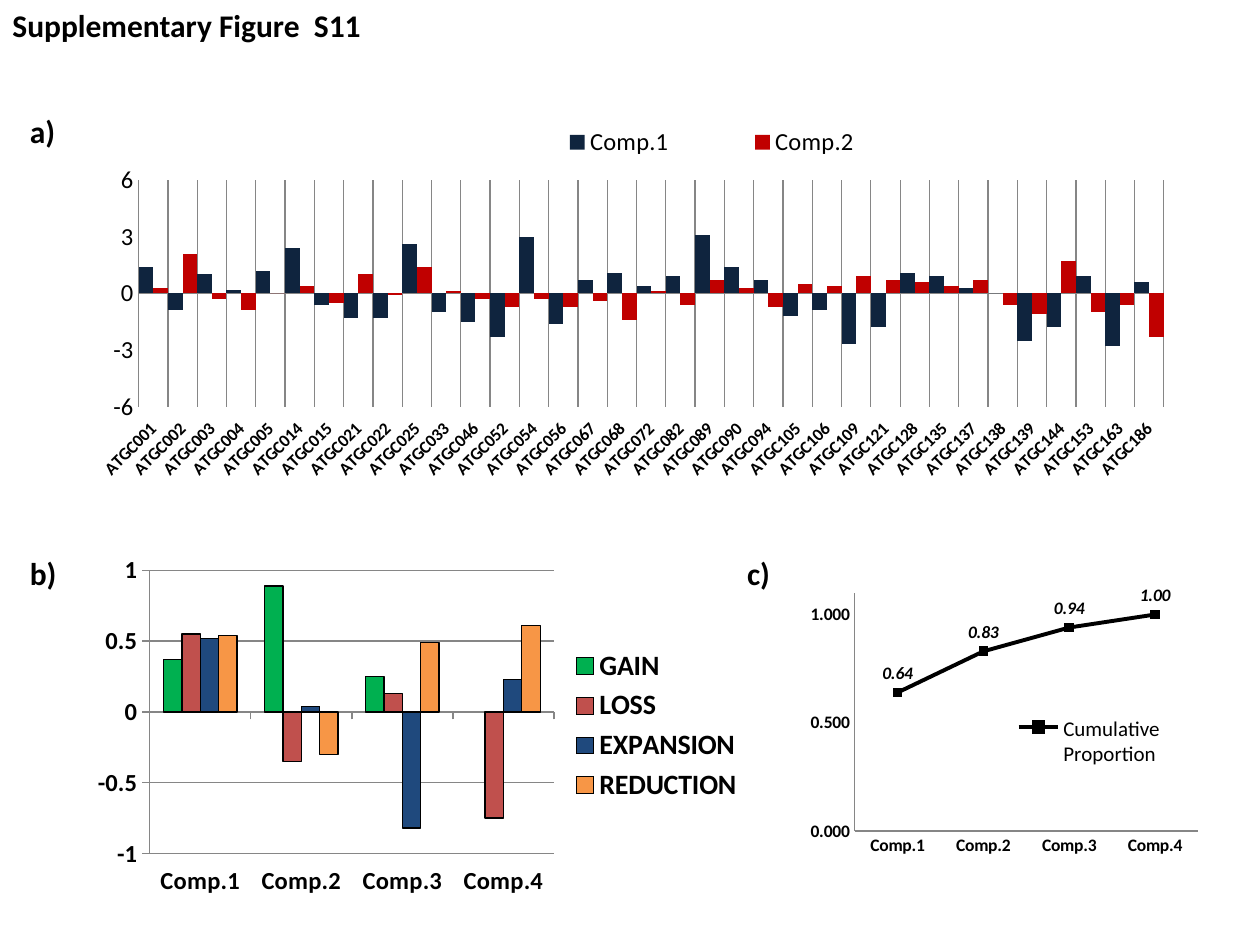
from lxml import etree
from pptx import Presentation
from pptx.chart.data import CategoryChartData
from pptx.dml.color import RGBColor
from pptx.enum.chart import (XL_CHART_TYPE, XL_LABEL_POSITION, XL_LEGEND_POSITION,
                             XL_MARKER_STYLE, XL_TICK_LABEL_POSITION, XL_TICK_MARK)
from pptx.enum.text import MSO_AUTO_SIZE
from pptx.oxml.ns import qn
from pptx.util import Pt

COLUMNS, LINE = XL_CHART_TYPE.COLUMN_CLUSTERED, XL_CHART_TYPE.LINE_MARKERS
TICK_NONE, TICK_OUT = XL_TICK_MARK.NONE, XL_TICK_MARK.OUTSIDE
LABELS_LOW, LABEL_ABOVE = XL_TICK_LABEL_POSITION.LOW, XL_LABEL_POSITION.ABOVE
LEGEND_RIGHT = XL_LEGEND_POSITION.RIGHT
MARKER_AUTOMATIC = XL_MARKER_STYLE.AUTOMATIC
FIT_SHAPE = MSO_AUTO_SIZE.SHAPE_TO_FIT_TEXT

FONT = "Calibri"
COLOURS = {
    "text": "000000", "axis": "868686", "navy": "0F243E", "crimson": "C00000",
    "green": "00B050", "red": "C0504D", "blue": "1F497D", "orange": "F79646",
}

COMPONENTS = [f"Comp.{number}" for number in range(1, 5)]
CLUSTERS = [f"ATGC{number:03d}" for number in (
    1, 2, 3, 4, 5, 14, 15, 21, 22, 25, 33, 46, 52, 54, 56, 67, 68, 72, 82, 89, 90, 94,
    105, 106, 109, 121, 128, 135, 137, 138, 139, 144, 153, 163, 186)]
SCORES = {
    "Comp.1": [1.4, -0.9, 1, 0.2, 1.2, 2.4, -0.6, -1.3, -1.3, 2.6, -1, -1.5, -2.3, 3, -1.6,
               0.7, 1.1, 0.4, 0.9, 3.1, 1.4, 0.7, -1.2, -0.9, -2.7, -1.8, 1.1, 0.9, 0.3, 0,
               -2.5, -1.8, 0.9, -2.8, 0.6],
    "Comp.2": [0.3, 2.1, -0.3, -0.9, 0, 0.4, -0.5, 1, -0.1, 1.4, 0.1, -0.3, -0.7, -0.3, -0.7,
               -0.4, -1.4, 0.1, -0.6, 0.7, 0.3, -0.7, 0.5, 0.4, 0.9, 0.7, 0.6, 0.4, 0.7, -0.6,
               -1.1, 1.7, -1, -0.6, -2.3],
}
LOADINGS = {
    "GAIN": [0.37, 0.89, 0.25, None],
    "LOSS": [0.55, -0.35, 0.13, -0.75],
    "EXPANSION": [0.52, 0.04, -0.82, 0.23],
    "REDUCTION": [0.54, -0.3, 0.49, 0.61],
}
PROPORTIONS = {"Cumulative Proportion": [0.64, 0.83, 0.94, 1]}


def colour(name):
    return RGBColor.from_string(COLOURS[name])


class FigureSlide:
    """Holds the figure's style and slide, and adds its labels and charts."""

    def __init__(self, slide):
        self.slide = slide

    def style_font(self, font, size, bold=False):
        font.name, font.size, font.bold = FONT, Pt(size), bold
        font.color.rgb = colour("text")

    def label(self, text, left, top, width, wrap=True):
        shape = self.slide.shapes.add_textbox(Pt(left), Pt(top), Pt(width), Pt(29))
        frame = shape.text_frame
        frame.word_wrap, frame.auto_size = wrap, FIT_SHAPE
        paragraph = frame.paragraphs[0]
        paragraph.text = text
        self.style_font(paragraph.font, 18, bold=True)

    def chart(self, kind, box, categories, values, size):
        data = CategoryChartData()
        data.categories = categories
        for name, numbers in values.items():
            data.add_series(name, numbers)
        chart = self.slide.shapes.add_chart(kind, *map(Pt, box), data).chart
        chart.has_title = False
        self.style_font(chart.font, size)
        chart.plots[0].vary_by_categories = False
        return chart

    def axis(self, axis, size, bold=False, tick=TICK_NONE, grid=False):
        axis.major_tick_mark, axis.minor_tick_mark = tick, TICK_NONE
        axis.format.line.color.rgb = colour("axis")
        axis.has_major_gridlines = grid
        if grid:
            axis.major_gridlines.format.line.color.rgb = colour("axis")
        self.style_font(axis.tick_labels.font, size, bold)

    def scale(self, axis, step, low=None, high=None):
        axis.major_unit, axis.minimum_scale, axis.maximum_scale = step, low, high

    def columns(self, chart, fills, gap, outlined=False):
        plot = chart.plots[0]
        plot.gap_width, plot.overlap = gap, 0
        for series, fill in zip(plot.series, fills):
            series.invert_if_negative = False
            series.format.fill.solid()
            series.format.fill.fore_color.rgb = colour(fill)
            if outlined:
                series.format.line.color.rgb = colour("text")
                series.format.line.width = Pt(0.75)

    def legend(self, chart, size, bold=False, area=None):
        chart.has_legend = True
        legend = chart.legend
        legend.position, legend.include_in_layout = LEGEND_RIGHT, False
        self.style_font(legend.font, size, bold)
        if area:
            self.place(legend._element, 1, area)

    def place(self, element, index, area, inner=False):
        for old in element.findall(qn("c:layout")):
            element.remove(old)
        layout = etree.Element(qn("c:layout"))
        manual = etree.SubElement(layout, qn("c:manualLayout"))
        settings = [("layoutTarget", "inner")] if inner else []
        settings += [("xMode", "edge"), ("yMode", "edge"), *zip("xywh", area)]
        for tag, value in settings:
            etree.SubElement(manual, qn(f"c:{tag}")).set("val", str(value))
        element.insert(index, layout)

    def place_plot(self, chart, area):
        self.place(chart._chartSpace.chart.plotArea, 0, area, inner=True)

    def loadings_chart(self):
        chart = self.chart(COLUMNS, (48.2, 313.2, 383.8, 203), COMPONENTS, LOADINGS, 10)
        self.axis(chart.category_axis, 14, bold=True, tick=TICK_OUT)
        chart.category_axis.tick_label_position = LABELS_LOW
        self.axis(chart.value_axis, 14, bold=True, tick=TICK_OUT, grid=True)
        self.scale(chart.value_axis, 0.5)
        self.columns(chart, ("green", "red", "blue", "orange"), 150, outlined=True)
        self.legend(chart, 16, bold=True)

    def proportion_chart(self):
        chart = self.chart(LINE, (453.6, 313.2, 248.4, 197.3), COMPONENTS, PROPORTIONS, 10)
        self.axis(chart.category_axis, 10, bold=True)
        self.axis(chart.value_axis, 10, bold=True)
        self.scale(chart.value_axis, 0.5, 0, 1.1)
        chart.value_axis.tick_labels.number_format = "0.000"
        chart.value_axis.tick_labels.number_format_is_linked = False
        series = chart.plots[0].series[0]
        series.smooth = False
        series.format.line.color.rgb = colour("text")
        marker = series.marker
        marker.style, marker.size = MARKER_AUTOMATIC, 5
        marker.format.fill.solid()
        marker.format.fill.fore_color.rgb = colour("text")
        marker.format.line.color.rgb = colour("text")
        labels = series.data_labels
        labels.show_value, labels.position = True, LABEL_ABOVE
        labels.number_format, labels.number_format_is_linked = "#,##0.00", False
        self.style_font(labels.font, 10, bold=True)
        labels.font.italic = True
        self.place_plot(chart, (0.14, 0.13, 0.79, 0.69))
        self.legend(chart, 12, area=(0.49, 0.47, 0.38, 0.18))

    def scores_chart(self):
        chart = self.chart(COLUMNS, (54, 66.2, 630, 216), CLUSTERS, SCORES, 14)
        self.axis(chart.category_axis, 10, bold=True, grid=True)
        chart.category_axis.tick_label_position = LABELS_LOW
        chart.category_axis._element.txPr.bodyPr.set("rot", "-2700000")
        self.axis(chart.value_axis, 14)
        self.scale(chart.value_axis, 3, -6, 6)
        self.columns(chart, ("navy", "crimson"), 0)
        self.place_plot(chart, (0.04, 0.17, 0.93, 0.6))
        self.legend(chart, 14, area=(0.36, 0.02, 0.4, 0.1))


def main():
    presentation = Presentation()
    presentation.slide_width, presentation.slide_height = Pt(720), Pt(540)
    figure = FigureSlide(presentation.slides.add_slide(presentation.slide_layouts[6]))
    figure.loadings_chart()
    figure.proportion_chart()
    figure.scores_chart()
    figure.label("a)", 10, 60.5, 31)
    figure.label("b)", 10, 313.2, 31)
    figure.label("Supplementary Figure  S11", 0, 0, 215.3, wrap=False)
    figure.label("c)", 419.8, 313.2, 31)
    presentation.save("out.pptx")


if __name__ == "__main__":
    main()
